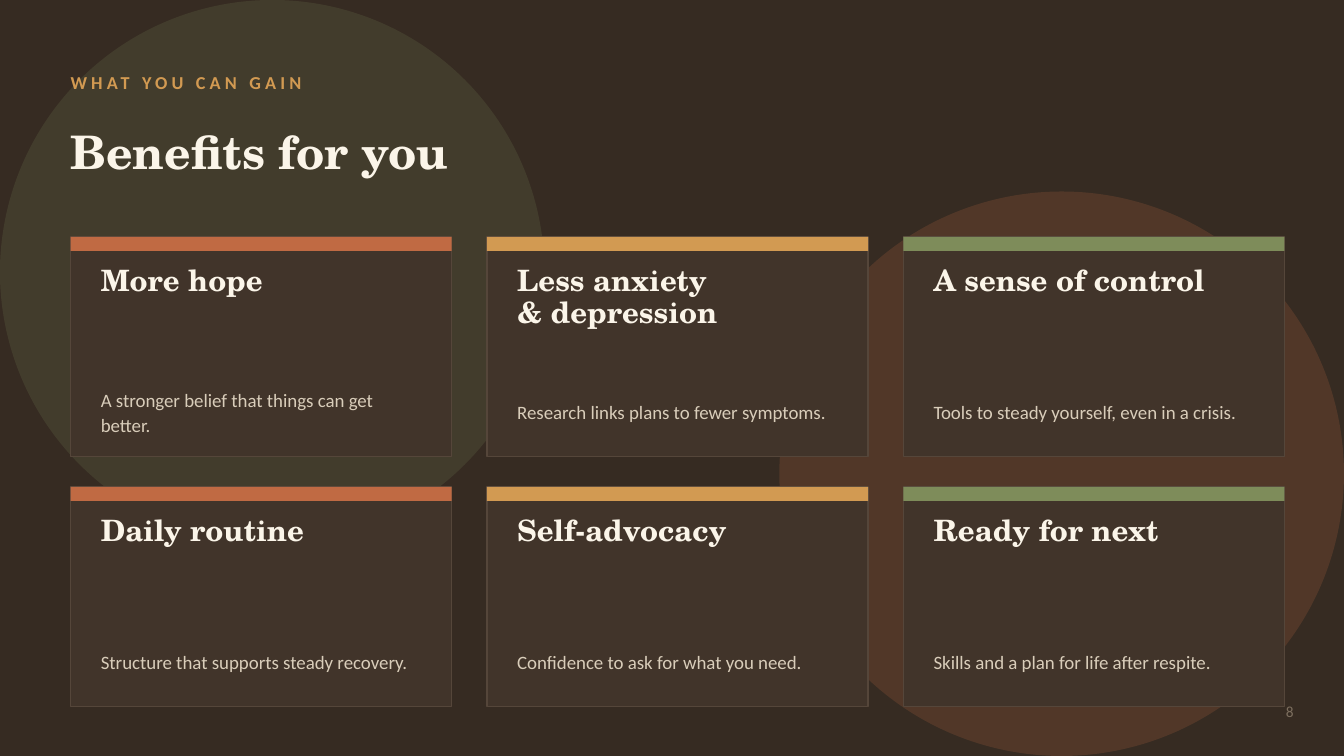
"""Build the "Benefits for you" slide with its six benefit cards."""
from lxml import etree
from pptx import Presentation, util as u
from pptx.dml import color
from pptx.enum import shapes, text
from pptx.oxml import ns

COLORS = {
    "background": "362B22", "card": "41342A", "border": "55463A",
    "clay": "C06A43", "amber": "D29A52", "sage": "7E8C5A",
    "cream": "FBF5E9", "sand": "D9CDBA", "muted": "7C6E5E",
}
SERIF, SANS = "TeX Gyre Schola", "Calibri"
FORMATS = {
    "eyebrow": {"size": u.Pt(13), "name": SANS, "bold": True},
    "title": {"size": u.Pt(33), "name": SERIF, "bold": True},
    "heading": {"size": u.Pt(21), "name": SERIF, "bold": True},
    "detail": {"size": u.Pt(13.5), "name": SANS},
    "page": {"size": u.Pt(11), "name": SANS},
}
TEXT_COLORS = {"eyebrow": "amber", "title": "cream", "heading": "cream",
               "detail": "sand", "page": "muted"}
LINE_HEIGHTS = {"heading": u.Pt(23), "detail": u.Pt(18)}
ACCENTS = ["clay", "amber", "sage"]
BENEFITS = [
    ("More hope", "A stronger belief that things can get better."),
    ("Less anxiety\n& depression", "Research links plans to fewer symptoms."),
    ("A sense of control", "Tools to steady yourself, even in a crisis."),
    ("Daily routine", "Structure that supports steady recovery."),
    ("Self-advocacy", "Confidence to ask for what you need."),
    ("Ready for next", "Skills and a plan for life after respite."),
]
LEFT, TOP = 0.7, 2.35
CARD_WIDTH, CARD_HEIGHT = 3.78, 2.18
COLUMN_STEP, ROW_STEP = 4.13, 2.48


def rgb(name):
    """Return the named palette colour."""
    return color.RGBColor.from_string(COLORS[name])


def add_panel(slide, kind, box, fill, border=None, opacity=None):
    """Add a filled shape with an optional border and opacity in percent."""
    panel = slide.shapes.add_shape(kind, *map(u.Inches, box))
    panel.shadow.inherit = False
    panel.fill.solid()
    panel.fill.fore_color.rgb = rgb(fill)
    if border:
        panel.line.color.rgb = rgb(border)
        panel.line.width = u.Pt(1)
    else:
        panel.line.fill.background()
    if opacity:
        tint = panel.fill._xPr.find(".//" + ns.qn("a:srgbClr"))
        etree.SubElement(tint, ns.qn("a:alpha"), val=str(opacity * 1000))


def add_words(slide, box, words, role, anchor=text.MSO_ANCHOR.MIDDLE,
              align=text.PP_ALIGN.LEFT, inset=0, tracking=None):
    """Add a text box in the format of its role, one paragraph per line."""
    frame = slide.shapes.add_textbox(*map(u.Inches, box)).text_frame
    layout = {"word_wrap": True, "vertical_anchor": anchor}
    for side in ("left", "right", "top", "bottom"):
        layout[f"margin_{side}"] = u.Inches(inset)
    for key, value in layout.items():
        setattr(frame, key, value)
    frame.text = words
    for paragraph in frame.paragraphs:
        paragraph.alignment = align
        paragraph.line_spacing = LINE_HEIGHTS.get(role)
        for run in paragraph.runs:
            for key, value in FORMATS[role].items():
                setattr(run.font, key, value)
            run.font.color.rgb = rgb(TEXT_COLORS[role])
            if tracking:
                run._r.get_or_add_rPr().set("spc", str(tracking * 100))


def add_benefit(slide, left, top, accent, heading, detail):
    """Add a card with its accent bar, heading and detail."""
    rectangle = shapes.MSO_SHAPE.RECTANGLE
    add_panel(slide, rectangle, (left, top, CARD_WIDTH, CARD_HEIGHT),
              "card", border="border")
    add_panel(slide, rectangle, (left, top, CARD_WIDTH, 0.14), accent)
    add_words(slide, (left + 0.3, top + 0.28, 3.23, 1.1), heading, "heading",
              anchor=text.MSO_ANCHOR.TOP)
    add_words(slide, (left + 0.3, top + 1.4, 3.23, 0.65), detail, "detail")


def main():
    """Build and save the slide."""
    deck = Presentation()
    deck.slide_width, deck.slide_height = u.Inches(13.33), u.Inches(7.5)
    slide = deck.slides.add_slide(deck.slide_layouts[6])
    slide.background.fill.solid()
    slide.background.fill.fore_color.rgb = rgb("background")

    oval = shapes.MSO_SHAPE.OVAL
    add_panel(slide, oval, (0, 0, 5.4, 5.4), "sage", opacity=18)
    add_panel(slide, oval, (7.73, 1.9, 5.6, 5.6), "clay", opacity=20)
    add_words(slide, (LEFT, 0.62, 9, 0.4), "WHAT YOU CAN GAIN", "eyebrow",
              tracking=3)
    add_words(slide, (LEFT, 1.05, 11, 0.9), "Benefits for you", "title")
    for index, (heading, detail) in enumerate(BENEFITS):
        row, column = divmod(index, len(ACCENTS))
        add_benefit(slide, LEFT + column * COLUMN_STEP, TOP + row * ROW_STEP,
                    ACCENTS[column], heading, detail)
    add_words(slide, (12.43, 6.88, 0.5, 0.35), "8", "page",
              align=text.PP_ALIGN.RIGHT, inset=0.1)
    deck.save("out.pptx")


if __name__ == "__main__":
    main()
